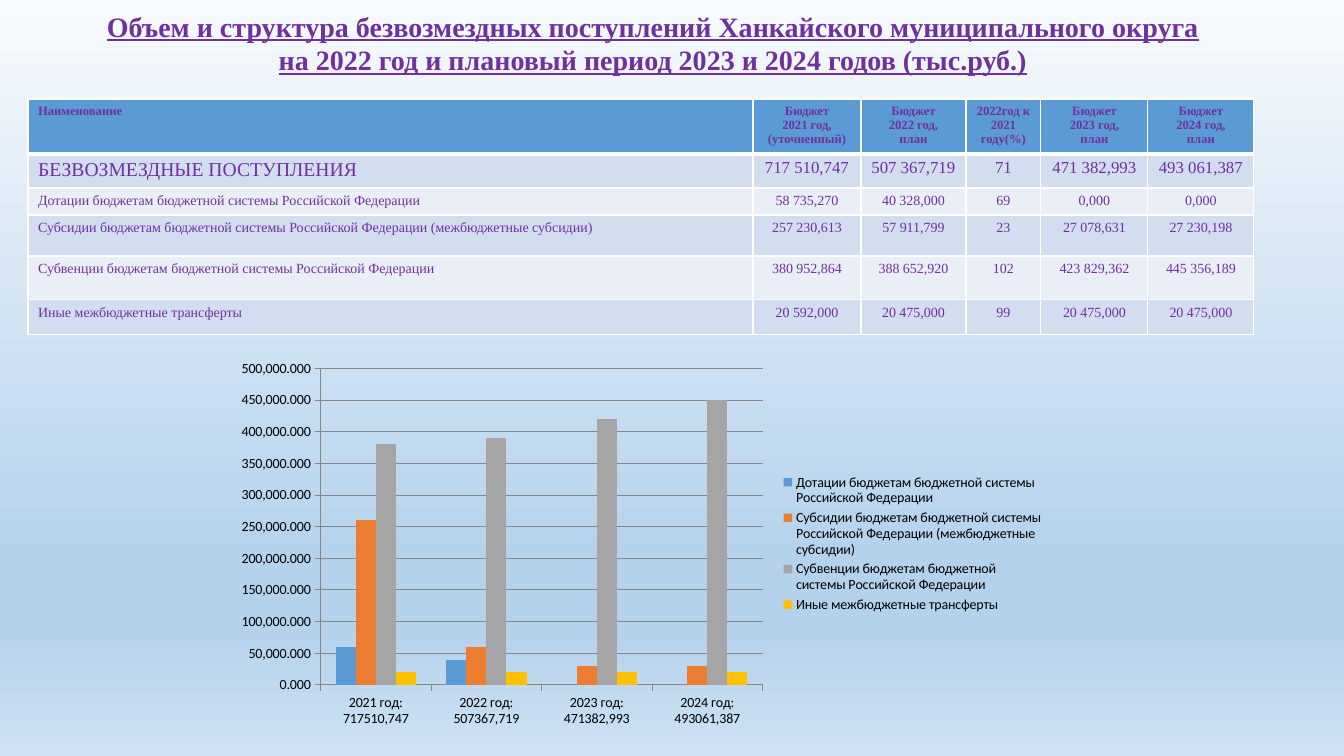
from lxml.etree import SubElement
from pptx import Presentation
from pptx.chart.data import CategoryChartData
from pptx.dml.color import RGBColor
from pptx.enum.chart import XL_CHART_TYPE, XL_LEGEND_POSITION, XL_TICK_MARK
from pptx.enum.text import MSO_ANCHOR, MSO_AUTO_SIZE, PP_ALIGN
from pptx.oxml.ns import qn
from pptx.util import Pt

TITLE = ("Объем и структура безвозмездных поступлений Ханкайского муниципального округа "
         "на 2022 год и плановый период 2023 и 2024 годов (тыс.руб.)")
HEADER = ("Наименование", "Бюджет\n2021 год, (уточненный)", "Бюджет\n2022 год,\nплан",
          "2022год к 2021\nгоду(%)", "Бюджет\n2023 год,\nплан", "Бюджет\n2024 год,\nплан")
TOTAL = ("БЕЗВОЗМЕЗДНЫЕ ПОСТУПЛЕНИЯ", "717 510,747", "507 367,719", "71", "471 382,993", "493 061,387")
TRANSFERS = [
    ("Дотации бюджетам бюджетной системы Российской Федерации",
     "58 735,270", "40 328,000", "69", "0,000", "0,000"),
    ("Субсидии бюджетам бюджетной системы Российской Федерации (межбюджетные субсидии)",
     "257 230,613", "57 911,799", "23", "27 078,631", "27 230,198"),
    ("Субвенции бюджетам бюджетной системы Российской Федерации",
     "380 952,864", "388 652,920", "102", "423 829,362", "445 356,189"),
    ("Иные межбюджетные трансферты",
     "20 592,000", "20 475,000", "99", "20 475,000", "20 475,000"),
]
YEARS = {"2021": 1, "2022": 2, "2023": 4, "2024": 5}
SERIES_COLORS = ("5B9BD5", "ED7D31", "A5A5A5", "FFC000")
BACKGROUND = ((0, "F7FAFD"), (74, "B5D2EC"), (83, "B5D2EC"), (100, "CEE1F2"))
COLUMN_WIDTHS = (725, 108, 105, 75, 107, 106)
ROW_HEIGHTS = (55, 34, 27, 41, 44, 35)
HEADER_FILL, BAND_FILLS = "5B9BD5", ("EAEFF7", "D2DEEF")
PURPLE, AXIS_GRAY, BORDER = "7030A0", "868686", "FFFFFF"
SLIDE_SIZE = (1344, 756)
TITLE_BOX = (88, 4, 1130, 112)
TABLE_CORNER = (28, 99)
CHART_BOX = (225, 353, 829, 381)
SCALE = 12192000 / 1344


def px(*lengths):
    """Turn pixel lengths into EMU."""
    return [round(length * SCALE) for length in lengths]


def color(value):
    """Return the colour of a hex string."""
    return RGBColor.from_string(value)


def style_text(text_frame, size, bold, alignment, underline=None):
    """Format every paragraph of a purple text."""
    for paragraph in text_frame.paragraphs:
        paragraph.alignment = alignment
        for run in paragraph.runs:
            font = run.font
            font.name, font.size, font.bold, font.underline = "Times New Roman", Pt(size), bold, underline
            font.color.rgb = color(PURPLE)


def draw_borders(cell, top, bottom):
    """Draw white cell borders, 1 pt at the sides."""
    properties = cell._tc.get_or_add_tcPr()
    for side, width in (("L", 1), ("R", 1), ("T", top), ("B", bottom)):
        line = SubElement(properties, qn(f"a:ln{side}"), w=str(Pt(width)))
        SubElement(SubElement(line, qn("a:solidFill")), qn("a:srgbClr"), val=BORDER)


def paint_background(slide):
    """Fill the slide with a vertical gradient."""
    fill = slide.background.fill
    fill.gradient()
    fill.gradient_angle = 270
    stops = slide.element.find(".//" + qn("a:gsLst"))
    for stop in list(stops):
        stops.remove(stop)
    for percent, value in BACKGROUND:
        stop = SubElement(stops, qn("a:gs"), pos=str(percent * 1000))
        SubElement(stop, qn("a:srgbClr"), val=value)


def add_title(slide):
    """Place and format the title."""
    title = slide.shapes.title
    title.left, title.top, title.width, title.height = px(*TITLE_BOX)
    frame = title.text_frame
    frame.text = TITLE
    frame.word_wrap = True
    frame.auto_size = MSO_AUTO_SIZE.NONE
    frame.vertical_anchor = MSO_ANCHOR.TOP
    style_text(frame, 20, True, PP_ALIGN.CENTER, True)


def add_budget_table(slide):
    """Add the table of transfers."""
    rows = [HEADER, TOTAL, *TRANSFERS]
    size = (sum(COLUMN_WIDTHS), sum(ROW_HEIGHTS))
    table = slide.shapes.add_table(len(rows), len(HEADER), *px(*TABLE_CORNER, *size)).table
    for column, width in zip(table.columns, px(*COLUMN_WIDTHS)):
        column.width = width
    for row, height in zip(table.rows, px(*ROW_HEIGHTS)):
        row.height = height
    for i, texts in enumerate(rows):
        for j, text in enumerate(texts):
            cell = table.cell(i, j)
            cell.text_frame.text = text
            draw_borders(cell, 3 if i == 1 else 1, 3 if i == 0 else 1)
            cell.fill.solid()
            cell.fill.fore_color.rgb = color(BAND_FILLS[i % 2] if i else HEADER_FILL)
            size = {0: 9, 1: 12 if j else 14}.get(i, 10)
            style_text(cell.text_frame, size, i == 0, PP_ALIGN.CENTER if j else PP_ALIGN.LEFT)


def add_transfer_chart(slide):
    """Add the column chart of transfers by year, rounded to ten thousands."""
    data = CategoryChartData(number_format="#,##0.000")
    data.categories = [f"{year} год: {TOTAL[j].replace(' ', '')}" for year, j in YEARS.items()]
    for row in TRANSFERS:
        amounts = [float(row[j].replace(" ", "").replace(",", ".")) for j in YEARS.values()]
        data.add_series(row[0], [round(amount / 10000) * 10000 for amount in amounts])
    chart = slide.shapes.add_chart(XL_CHART_TYPE.COLUMN_CLUSTERED, *px(*CHART_BOX), data).chart
    chart.has_title = False
    chart.font.name, chart.font.size = "Calibri", Pt(10)
    chart.font.color.rgb = color("000000")
    chart.has_legend = True
    chart.legend.position = XL_LEGEND_POSITION.RIGHT
    chart.legend.include_in_layout = False
    plot = chart.plots[0]
    plot.gap_width, plot.overlap, plot.vary_by_categories = 150, 0, False
    for series, value in zip(plot.series, SERIES_COLORS):
        series.format.fill.solid()
        series.format.fill.fore_color.rgb = color(value)
    value_axis = chart.value_axis
    value_axis.has_major_gridlines = True
    value_axis.minimum_scale, value_axis.maximum_scale, value_axis.major_unit = 0, 500000, 50000
    value_axis.tick_labels.number_format = "#,##0.000"
    value_axis.tick_labels.number_format_is_linked = False
    for axis in (chart.category_axis, value_axis):
        axis.major_tick_mark = XL_TICK_MARK.OUTSIDE
    for lined in (chart.category_axis, value_axis, value_axis.major_gridlines):
        lined.format.line.color.rgb = color(AXIS_GRAY)
        lined.format.line.width = Pt(0.75)


def main():
    """Build the slide and save it."""
    presentation = Presentation()
    presentation.slide_width, presentation.slide_height = px(*SLIDE_SIZE)
    slide = presentation.slides.add_slide(presentation.slide_layouts[5])
    paint_background(slide)
    add_title(slide)
    add_budget_table(slide)
    add_transfer_chart(slide)
    presentation.save("out.pptx")


if __name__ == "__main__":
    main()
